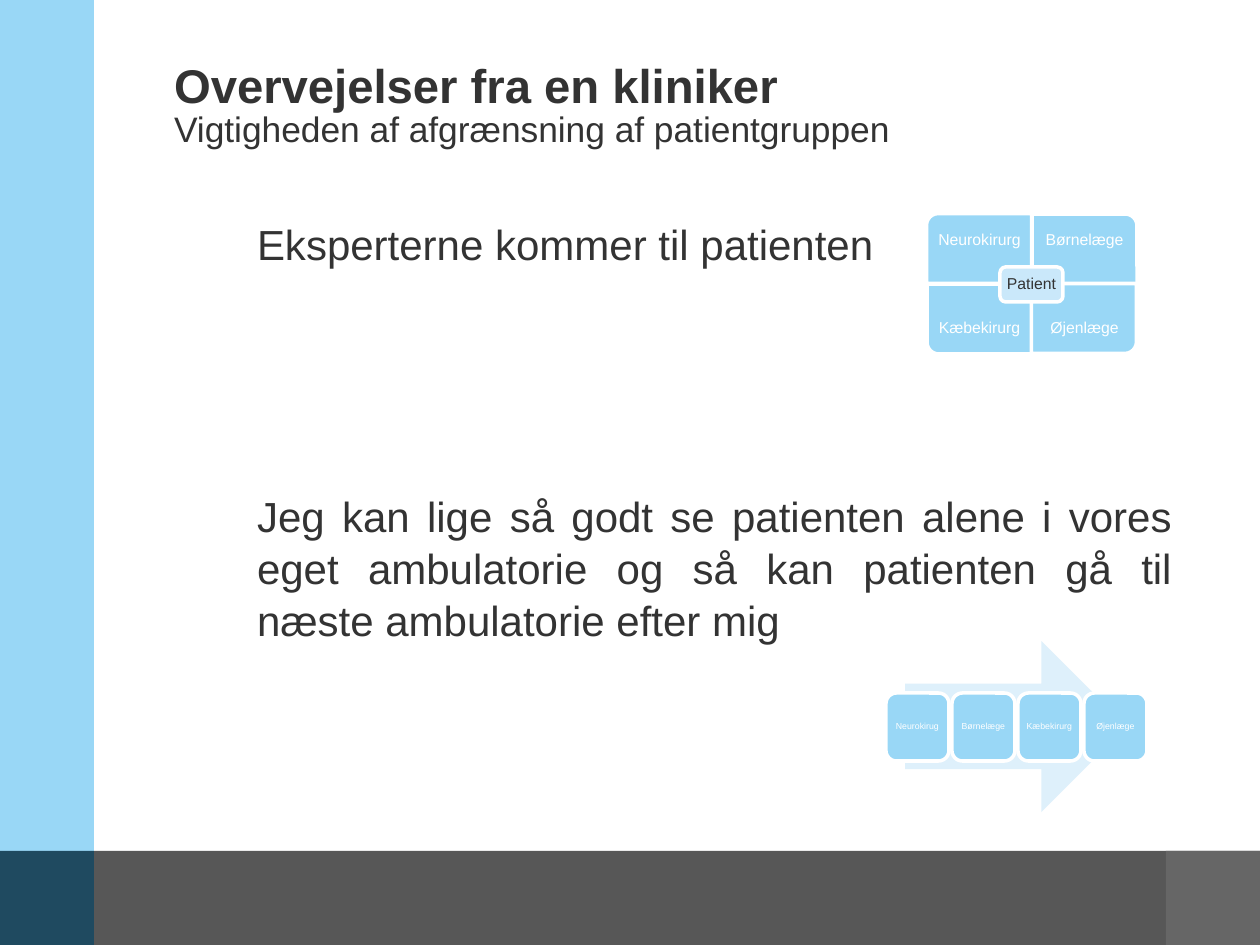
from copy import deepcopy

from pptx import Presentation
from pptx.dml.color import RGBColor
from pptx.enum.shapes import MSO_SHAPE as SHAPE
from pptx.enum.text import MSO_ANCHOR as ANCHOR, MSO_AUTO_SIZE as AUTO, PP_ALIGN as ALIGN
from pptx.util import Pt
from lxml import etree

PX = 914400 / 126  # EMU in one px
DARK, WHITE, SKY = "333333", "FFFFFF", "99D7F6"
rgb = RGBColor.from_string


def box(shapes, kind, x, y, w, h, fill, outlined=False):
    """Add a preset shape, or a text box when kind is None."""
    place = [round(v * PX) for v in (x, y, w, h)]
    if kind is None:
        return shapes.add_textbox(*place)
    sp = shapes.add_shape(kind, *place)
    sp.shadow.inherit = False
    sp.fill.solid()
    sp.fill.fore_color.rgb = rgb(fill)
    if outlined:
        sp.line.color.rgb = rgb(WHITE)
        sp.line.width = Pt(2)
    else:
        sp.line.fill.background()
    return sp


def label(sp, text, size, color, inset):
    """Centre a text in a shape."""
    tf = sp.text_frame
    tf.text = text
    tf.word_wrap = True
    tf.vertical_anchor = ANCHOR.MIDDLE
    tf.margin_left = tf.margin_right = tf.margin_top = tf.margin_bottom = round(inset * PX)
    p = tf.paragraphs[0]
    p.alignment = ALIGN.CENTER
    p.line_spacing = 0.9
    font = p.runs[0].font
    font.name, font.size, font.color.rgb = "Arial", Pt(size), rgb(color)


prs = Presentation()
prs.slide_width, prs.slide_height = round(1260 * PX), round(945 * PX)
slide = prs.slides.add_slide(prs.slide_layouts[1])
title, body = slide.placeholders

# Frame of the page
for x, y, w, h, fill in [
    (94, 851, 1166, 94, "575757"),
    (1166, 851, 94, 94, "666666"),
    (0, 0, 94, 851, SKY),
    (0, 851, 94, 94, "1F4A60"),
]:
    box(slide.shapes, SHAPE.RECTANGLE, x, y, w, h, fill)

# Title and body placeholders
for sp, x, y, w, h in [(title, 174, 65, 978, 118), (body, 194, 214, 978, 435)]:
    sp.left, sp.top, sp.width, sp.height = [round(v * PX) for v in (x, y, w, h)]
    tf = sp.text_frame
    tf.auto_size = AUTO.NONE
    tf.word_wrap = True
    tf.vertical_anchor = ANCHOR.TOP
    tf.margin_left = tf.margin_right = tf.margin_top = tf.margin_bottom = 0

p = title.text_frame.paragraphs[0]
p.text = "Overvejelser fra en kliniker\vVigtigheden af afgrænsning af patientgruppen"
p.alignment = ALIGN.LEFT
p.line_spacing = 0.85
for r, size, bold in zip(p.runs, (27, 20.2), (True, False)):
    r.font.name, r.font.size, r.font.bold = "Arial", Pt(size), bold
    r.font.color.rgb = rgb(DARK)
# The line break takes the heading's format, so it does not stretch the line
heading = p.runs[0]._r
heading.getnext().append(deepcopy(heading.rPr))

tf = body.text_frame
tf.margin_top = round(3 * PX)
tf.text = (
    "Eksperterne kommer til patienten\n"
    "Jeg kan lige så godt se patienten alene i vores eget ambulatorie "
    "og så kan patienten gå til næste ambulatorie efter mig"
)
for p, align, before in zip(tf.paragraphs, (ALIGN.LEFT, ALIGN.JUSTIFY), (0, 113)):
    p.level = 1
    p.alignment = align
    p.line_spacing = 1.04
    p.space_before, p.space_after = Pt(before), Pt(12)
    pPr = p._p.get_or_add_pPr()
    pPr.set("marL", str(round(63 * PX)))
    pPr.set("indent", "0")
    etree.SubElement(pPr, "{http://schemas.openxmlformats.org/drawingml/2006/main}buNone")
    font = p.runs[0].font
    font.name, font.size, font.color.rgb = "Arial", Pt(24), rgb(DARK)

# Matrix: four specialists around the patient
matrix = slide.shapes.add_group_shape().shapes
W, H = 105, 70
specialists = [
    ("Neurokirurg", 0, 0, 270),
    ("Børnelæge", 1, 0, 0),
    ("Kæbekirurg", 0, 1, 180),
    ("Øjenlæge", 1, 1, 90),
]
for name, col, row, angle in specialists:
    x, y = 927 + col * W, 214 + row * H
    w, h = (H, W) if angle in (90, 270) else (W, H)
    sp = box(matrix, SHAPE.ROUND_1_RECTANGLE, x + (W - w) // 2, y + (H - h) // 2, w, h, SKY, True)
    sp.rotation = angle
    label(box(matrix, None, x, y + row * 18, W, 52, None), name, 9, WHITE, 9)
patient = box(matrix, SHAPE.ROUNDED_RECTANGLE, 1000, 267, 63, 35, "CAE8FA", True)
label(patient, "Patient", 9, DARK, 5)

# Process: one outpatient clinic after the other
process = slide.shapes.add_group_shape().shapes
box(process, SHAPE.RIGHT_ARROW, 905, 641, 222, 171, "DEF0FB")
for i, name in enumerate(["Neurokirug", "Børnelæge", "Kæbekirurg", "Øjenlæge"]):
    card = box(process, SHAPE.ROUNDED_RECTANGLE, 886 + 66 * i, 693, 63, 68, SKY, True)
    label(card, name, 5, WHITE, 3)

prs.save("out.pptx")
